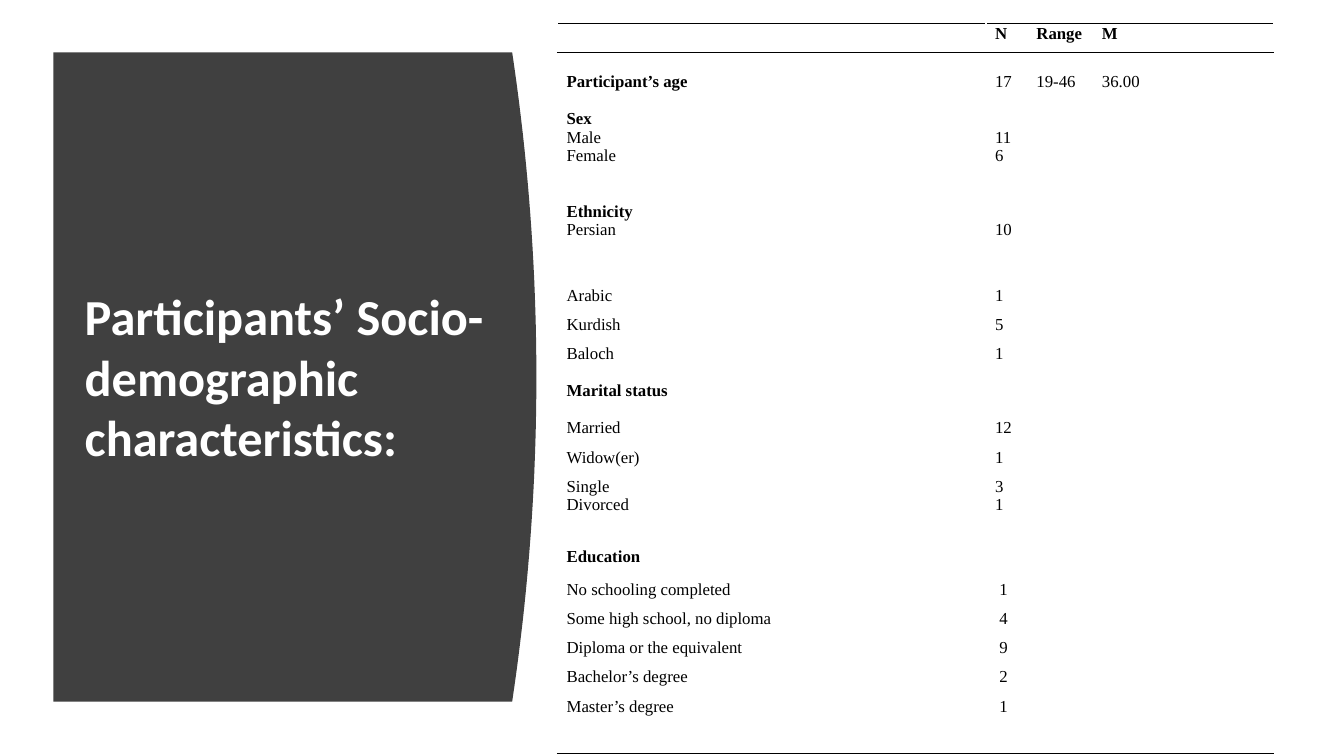
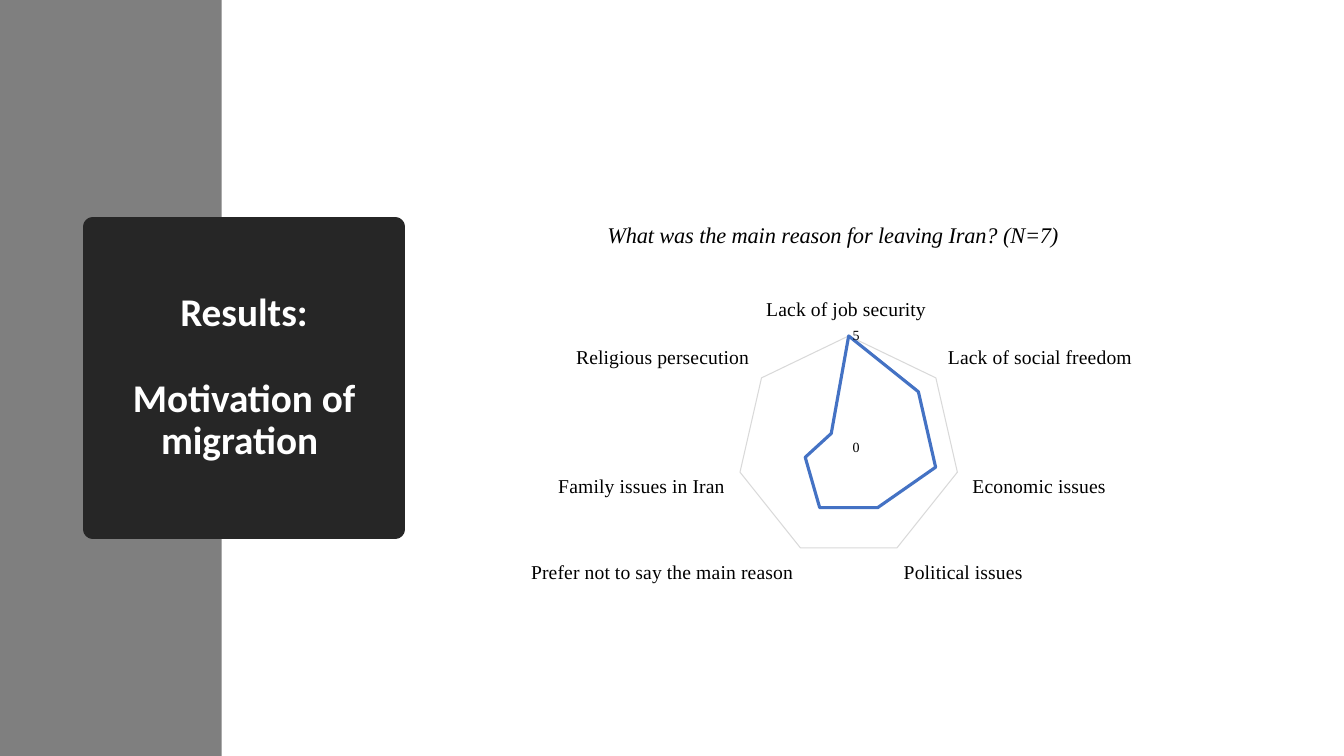
from lxml.etree import SubElement
from pptx import Presentation
from pptx.chart.data import CategoryChartData
from pptx.dml.color import RGBColor
from pptx.enum.chart import XL_CHART_TYPE as ChartType, XL_TICK_MARK as TickMark
from pptx.enum.shapes import MSO_SHAPE as Shape
from pptx.enum.text import MSO_ANCHOR as Anchor, MSO_AUTO_SIZE as AutoSize, PP_ALIGN as Align
from pptx.oxml import parse_xml
from pptx.oxml.ns import nsdecls, qn
from pptx.util import Inches, Pt

WIDTH, HEIGHT = 13.33, 7.5
WHITE = RGBColor(0xFF, 0xFF, 0xFF)
BLACK = RGBColor(0x00, 0x00, 0x00)
CHARCOAL = RGBColor(0x40, 0x40, 0x40)
NIGHT = RGBColor(0x26, 0x26, 0x26)
GREY = RGBColor(0x7F, 0x7F, 0x7F)
PALE = RGBColor(0xD9, 0xD9, 0xD9)
BLUE = RGBColor(0x44, 0x72, 0xC4)
SANS, SERIF = "Calibri", "Times New Roman"

LINE = 13.2
ROW = 0.29
COLUMNS = (4.25, 2.85)
TAB_STOPS = (0.41, 1.06)
HEADINGS = {"Participant’s age", "Sex", "Ethnicity", "Marital status", "Education",
            "N\tRange\tM"}

TABLE_ROWS = [
    (ROW, {}, {0: "N\tRange\tM"}),
    (2.3, {1: "Participant’s age", 3: "Sex", 4: "Male", 5: "Female", 8: "Ethnicity", 9: "Persian"},
     {1: "17\t19-46\t36.00", 4: "11", 5: "6", 9: "10"}),
    (ROW, {0: "Arabic"}, {0: "1"}),
    (ROW, {0: "Kurdish"}, {0: "5"}),
    (0.74, {0: "Baloch", 2: "Marital status"}, {0: "1"}),
    (ROW, {0: "Married"}, {0: "12"}),
    (ROW, {0: "Widow(er)"}, {0: "1"}),
    (0.51, {0: "Single", 1: "Divorced"}, {0: "3", 1: "1"}),
    (0.51, {1: "Education"}, {}),
    (ROW, {0: "No schooling completed"}, {0: " 1"}),
    (ROW, {0: "Some high school, no diploma"}, {0: " 4"}),
    (ROW, {0: "Diploma or the equivalent"}, {0: " 9"}),
    (ROW, {0: "Bachelor’s degree"}, {0: " 2"}),
    (ROW, {0: "Master’s degree"}, {0: " 1"}),
    (ROW, {}, {}),
]

REASONS = {
    "Lack of job security ": 5,
    "Lack of social freedom": 4,
    "Economic issues": 4,
    "Political issues": 3,
    "Prefer not to say the main reason": 3,
    "Family issues in Iran": 2,
    "Religious persecution": 1,
}


def style_font(font, size, face=SERIF, color=BLACK, bold=False, italic=False):
    """Set every visible property of a font."""
    font.size, font.name, font.bold, font.italic = Pt(size), face, bold, italic
    font.color.rgb = color


def write(paragraph, text, align=Align.LEFT, spacing=None, before=0, **font):
    """Add formatted text to a paragraph."""
    paragraph.alignment = align
    paragraph.line_spacing = spacing
    paragraph.space_before = Pt(before)
    run = paragraph.add_run()
    run.text = text
    style_font(run.font, **font)


def paint(shape, color):
    """Give a shape a plain fill without outline or shadow."""
    shape.fill.solid()
    shape.fill.fore_color.rgb = color
    shape.line.fill.background()
    shape.shadow.inherit = False


def place_title(slide, box, texts, size, gap=0, **layout):
    """Move the title in front of its panel and write its paragraphs."""
    title = slide.shapes.title
    title.element.getparent().append(title.element)
    title.left, title.top, title.width, title.height = map(Inches, box)
    frame = title.text_frame
    frame.word_wrap, frame.auto_size = True, AutoSize.NONE
    frame.vertical_anchor = Anchor.MIDDLE
    for index, text in enumerate(texts):
        paragraph = frame.add_paragraph() if index else frame.paragraphs[0]
        write(paragraph, text, before=gap if index else 0, size=size, face=SANS,
              color=WHITE, bold=True, **layout)
    return title


def add_curved_panel(slide, left, top, right, bottom, bulge, steps=40):
    """Draw a panel whose right side bows outwards."""
    ts = [2 * step / steps - 1 for step in range(steps + 1)]
    middle, half = (top + bottom) / 2, (bottom - top) / 2
    curve = [(right + bulge * (1 - t * t), middle + half * t) for t in ts]
    corners = [(Inches(x), Inches(y)) for x, y in [*curve, (left, bottom)]]
    outline = slide.shapes.build_freeform(Inches(left), Inches(top))
    outline.add_line_segments(corners, close=True)
    paint(outline.convert_to_shape(), CHARCOAL)


def set_borders(cell, top, bottom):
    """Draw white side borders and coloured rules above and below a cell."""
    properties = cell._tc.get_or_add_tcPr()
    for side, color in zip("LRTB", (WHITE, WHITE, top, bottom)):
        properties.append(parse_xml(
            f'<a:ln{side} {nsdecls("a")} w="{Pt(1)}"><a:solidFill>'
            f'<a:srgbClr val="{color}"/></a:solidFill></a:ln{side}>'))


def add_tab_stops(paragraph):
    """Align the range and mean under their headings."""
    stops = SubElement(paragraph._p.get_or_add_pPr(), qn("a:tabLst"))
    for position in TAB_STOPS:
        SubElement(stops, qn("a:tab"), pos=str(Inches(position)), algn="l")


def fill_cell(cell, lines):
    """Write texts on the numbered lines of a cell."""
    first = min(lines, default=0)
    cell.margin_left = cell.margin_right = Inches(0.09)
    cell.margin_top, cell.margin_bottom = Inches(0.02) + Pt(first * LINE), 0
    frame = cell.text_frame
    previous = first - 1
    for number, text in lines.items():
        paragraph = frame.paragraphs[0] if number == first else frame.add_paragraph()
        write(paragraph, text, spacing=Pt(LINE), before=(number - previous - 1) * LINE,
              size=12, bold=text in HEADINGS)
        if "\t" in text:
            add_tab_stops(paragraph)
        previous = number
    if not lines:
        SubElement(frame.paragraphs[0]._p, qn("a:endParaRPr"), sz="1200")


def add_characteristics(slide, left, top):
    """Build the table of participants' characteristics."""
    height = sum(row[0] for row in TABLE_ROWS)
    table = slide.shapes.add_table(
        len(TABLE_ROWS), len(COLUMNS), Inches(left), Inches(top),
        Inches(sum(COLUMNS)), Inches(height)).table
    table.first_row = table.horz_banding = False
    for column, width in zip(table.columns, COLUMNS):
        column.width = Inches(width)
    last = len(TABLE_ROWS) - 1
    for index, (row_height, *cells) in enumerate(TABLE_ROWS):
        table.rows[index].height = Inches(row_height)
        rule_above = BLACK if index in (0, 1) else WHITE
        rule_below = BLACK if index in (0, last) else WHITE
        for cell, lines in zip(table.rows[index].cells, cells):
            fill_cell(cell, lines)
            set_borders(cell, rule_above, rule_below)
            cell.fill.background()


def set_layout(parent, index, inner=False, **shares):
    """Place a chart part by shares of the chart's size."""
    current = parent.find(qn("c:layout"))
    if current is not None:
        parent.remove(current)
    target = '<c:layoutTarget val="inner"/>' if inner else ""
    modes = "".join(f'<c:{key}Mode val="edge"/>' for key in "xy")
    values = "".join(f'<c:{key} val="{share}"/>' for key, share in shares.items())
    parent.insert(index, parse_xml(
        f'<c:layout {nsdecls("c")}><c:manualLayout>{target}{modes}{values}'
        '</c:manualLayout></c:layout>'))


def add_reasons_chart(slide, box):
    """Build the radar chart of reasons for leaving."""
    data = CategoryChartData()
    data.categories = list(REASONS)
    data.add_series("Series 1", list(REASONS.values()))
    chart = slide.shapes.add_chart(ChartType.RADAR, *map(Inches, box), data).chart
    style_font(chart.font, 10, SANS)
    chart.has_legend = False
    write(chart.chart_title.text_frame.paragraphs[0],
          "What was the main reason for leaving Iran? (N=7)",
          align=Align.CENTER, size=16, italic=True)
    set_layout(chart.chart_title._element, 1, x=0.14, y=0.03)
    set_layout(chart._chartSpace.find(".//" + qn("c:plotArea")), 0, inner=True,
               x=0.35, y=0.32, w=0.35, h=0.58)

    reasons, counts = chart.category_axis, chart.value_axis
    for axis, size in ((reasons, 14), (counts, 10)):
        style_font(axis.tick_labels.font, size)
        axis.major_tick_mark = axis.minor_tick_mark = TickMark.NONE
    reasons.has_major_gridlines = False
    counts.has_major_gridlines = True
    counts.minimum_scale, counts.maximum_scale, counts.major_unit = 0, 5, 5
    counts.format.line.fill.background()
    for line in (reasons.format.line, counts.major_gridlines.format.line):
        line.color.rgb, line.width = PALE, Pt(0.75)

    plot = chart.plots[0]
    plot.vary_by_categories = False
    answers = plot.series[0].format.line
    answers.color.rgb, answers.width = BLUE, Pt(2.25)


def build_participants(slide):
    """Lay out the participants slide."""
    add_curved_panel(slide, 0.53, 0.52, 5.08, 6.96, bulge=0.24)
    place_title(slide, (0.74, 1.11, 4.38, 5.24),
                ["Participants’ Socio-demographic characteristics:"], 36, spacing=1.0)
    add_characteristics(slide, 5.53, 0.23)


def build_motivation(slide):
    """Lay out the motivation slide."""
    band = slide.shapes.add_shape(Shape.RECTANGLE, 0, 0, Inches(2.2), Inches(HEIGHT))
    paint(band, GREY)
    title = place_title(slide, (0.92, 2.25, 3, 3), ["Results:", "Motivation of migration "],
                        28, gap=30.8, align=Align.CENTER, spacing=0.9)
    paint(title, NIGHT)
    title.line.color.rgb, title.line.width = NIGHT, Pt(13.75)
    add_reasons_chart(slide, (5.1, 2.03, 6.32, 3.95))


def main():
    """Build and save the presentation."""
    deck = Presentation()
    deck.slide_width, deck.slide_height = Inches(WIDTH), Inches(HEIGHT)
    title_only = deck.slide_layouts[5]
    for build in (build_participants, build_motivation):
        build(deck.slides.add_slide(title_only))
    deck.save("out.pptx")


if __name__ == "__main__":
    main()
